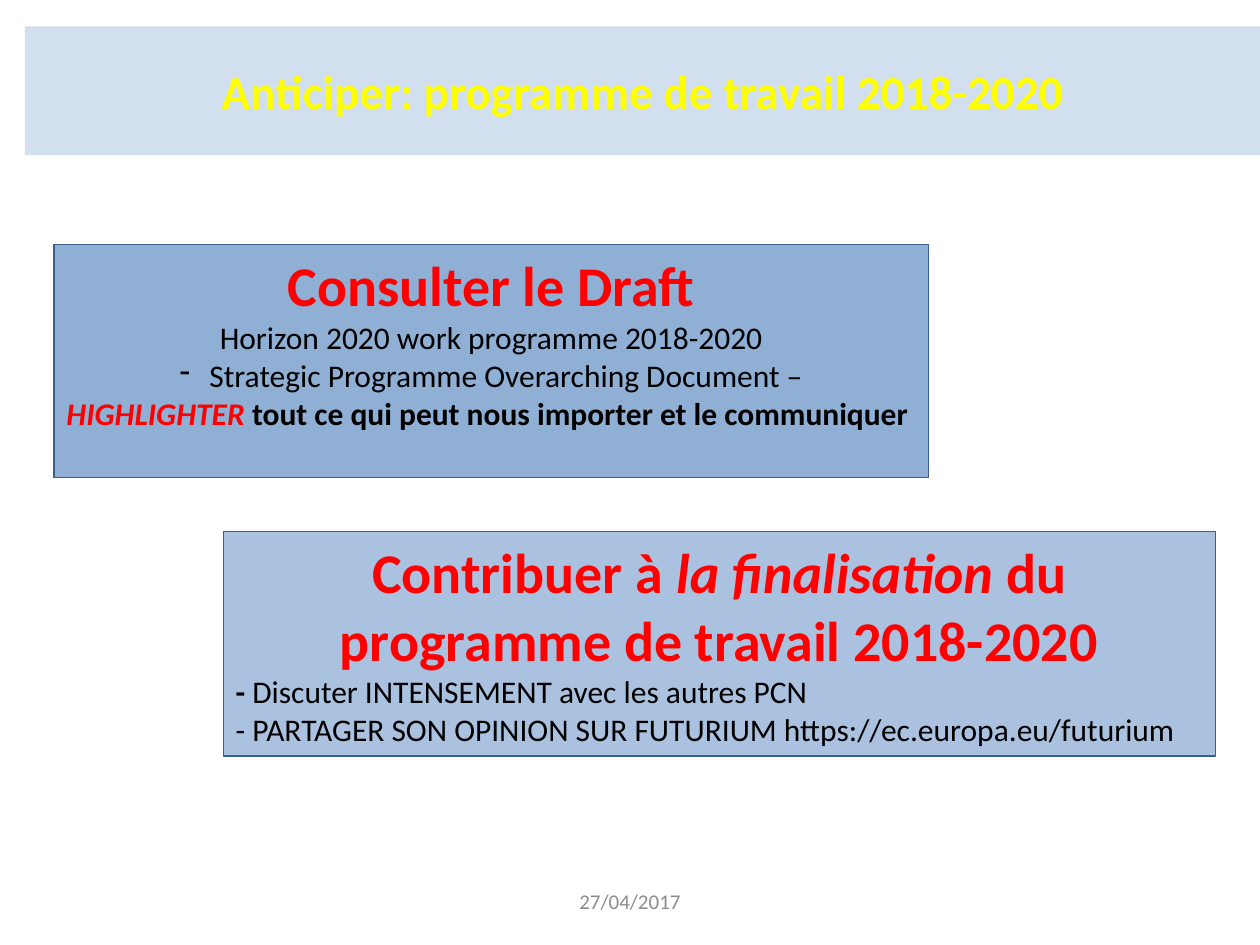
import pptx
import pptx.dml.color
import pptx.enum.shapes
import pptx.enum.text
import pptx.oxml.ns
import pptx.util
from lxml import etree
from pptx.util import Cm

COLORS = {
    "panel": "4F81BD",
    "border": "3A5F8C",
    "title": "FFFF00",
    "accent": "FF0000",
    "body": "000000",
    "date": "8C8C8C",
}
FONT = "Calibri"
ALIGN = pptx.enum.text.PP_ALIGN
ANCHOR = pptx.enum.text.MSO_ANCHOR


def rgb(name):
    return pptx.dml.color.RGBColor.from_string(COLORS[name])


def add_run(paragraph, text, size=18, color="body", bold=False, italic=False):
    run = paragraph.add_run()
    run.text = text
    run.font.name = FONT
    run.font.size = pptx.util.Pt(size)
    run.font.color.rgb = rgb(color)
    run.font.bold = bold
    run.font.italic = italic


def add_line(frame, first=False, align=ALIGN.LEFT):
    paragraph = frame.paragraphs[0] if first else frame.add_paragraph()
    paragraph.alignment = align
    return paragraph


def set_dash_bullet(paragraph, indent):
    properties = paragraph._p.get_or_add_pPr()
    properties.set("marL", str(indent))
    properties.set("indent", str(-indent))
    bullet = etree.SubElement(properties, pptx.oxml.ns.qn("a:buChar"))
    bullet.set("char", "-")


def fill_translucent(shape, opacity):
    """Fill with the panel colour at an opacity given in percent."""
    shape.fill.solid()
    shape.fill.fore_color.rgb = rgb("panel")
    color = shape.fill._xPr.find(".//" + pptx.oxml.ns.qn("a:srgbClr"))
    alpha = etree.SubElement(color, pptx.oxml.ns.qn("a:alpha"))
    alpha.set("val", str(opacity * 1000))


def add_panel(slide, box, opacity):
    """Add a bordered panel and return its text frame."""
    panel = slide.shapes.add_shape(pptx.enum.shapes.MSO_SHAPE.RECTANGLE, *box)
    panel.shadow.inherit = False
    fill_translucent(panel, opacity)
    panel.line.color.rgb = rgb("border")
    panel.line.width = pptx.util.Pt(0.75)
    panel.text_frame.word_wrap = True
    panel.text_frame.vertical_anchor = ANCHOR.TOP
    return panel.text_frame


def place_title(slide, box):
    title = slide.shapes.title
    title.left, title.top, title.width, title.height = box
    fill_translucent(title, 25)
    frame = title.text_frame
    frame.auto_size = pptx.enum.text.MSO_AUTO_SIZE.NONE
    frame.vertical_anchor = ANCHOR.MIDDLE
    add_run(add_line(frame, first=True, align=ALIGN.CENTER),
            "Anticiper: programme de travail 2018-2020",
            size=27, color="title", bold=True)


def add_draft_panel(slide, box):
    frame = add_panel(slide, box, 63)
    add_run(add_line(frame, first=True, align=ALIGN.CENTER), "Consulter le Draft",
            size=32, color="accent", bold=True)
    add_run(add_line(frame, align=ALIGN.CENTER), "Horizon 2020 work programme 2018-2020")
    document = add_line(frame, align=ALIGN.CENTER)
    set_dash_bullet(document, Cm(0.6))
    add_run(document, "Strategic Programme Overarching Document –")
    action = add_line(frame)
    add_run(action, "HIGHLIGHTER ", color="accent", bold=True, italic=True)
    add_run(action, "tout ce qui peut nous importer et le communiquer", bold=True)


def add_contribution_panel(slide, box):
    frame = add_panel(slide, box, 48)
    heading = add_line(frame, first=True, align=ALIGN.CENTER)
    for text, italic in (("Contribuer à ", False),
                         ("la finalisation ", True),
                         ("du programme de travail 2018-2020", False)):
        add_run(heading, text, size=32, color="accent", bold=True, italic=italic)
    discussion = add_line(frame)
    add_run(discussion, "- ", bold=True)
    add_run(discussion, "Discuter INTENSEMENT avec les autres PCN")
    add_run(add_line(frame),
            "- PARTAGER SON OPINION SUR FUTURIUM https://ec.europa.eu/futurium")


def add_date(slide, box):
    frame = slide.shapes.add_textbox(*box).text_frame
    frame.word_wrap = True
    frame.vertical_anchor = ANCHOR.MIDDLE
    add_run(add_line(frame, first=True, align=ALIGN.CENTER), "27/04/2017",
            size=12, color="date")


def main():
    presentation = pptx.Presentation()
    presentation.slide_width = Cm(25.4)
    presentation.slide_height = Cm(19.05)
    slide = presentation.slides.add_slide(presentation.slide_layouts[5])
    add_date(slide, (Cm(8.68), Cm(17.65), Cm(8.04), Cm(1.02)))
    add_draft_panel(slide, (Cm(1.09), Cm(4.93), Cm(17.63), Cm(4.7)))
    add_contribution_panel(slide, (Cm(4.5), Cm(10.72), Cm(20), Cm(4.52)))
    place_title(slide, (Cm(0.5), Cm(0.53), Cm(24.9), Cm(2.6)))
    presentation.save("out.pptx")


if __name__ == "__main__":
    main()
